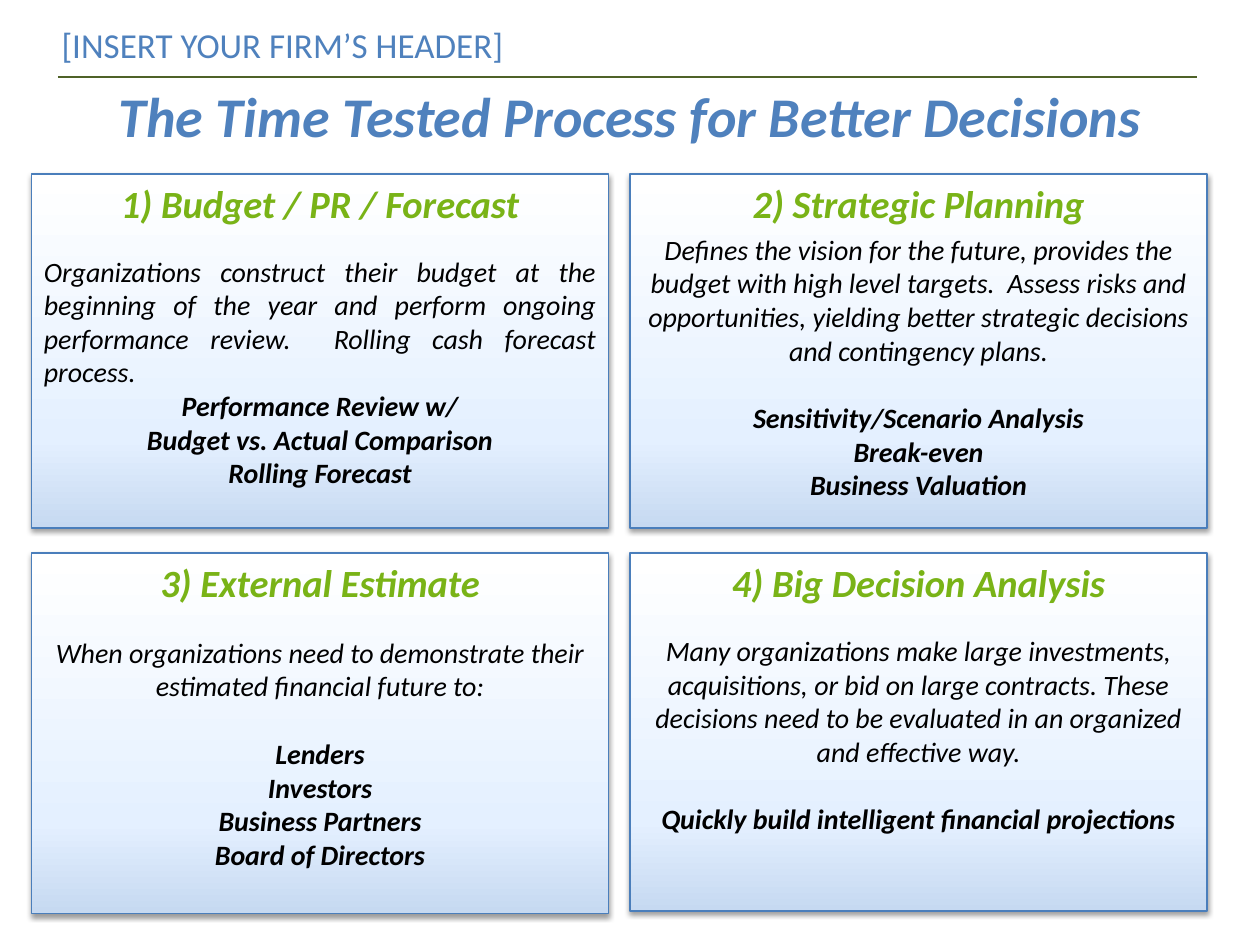
from lxml import etree
from pptx import Presentation
from pptx.dml.color import RGBColor
from pptx.enum.shapes import MSO_CONNECTOR, MSO_SHAPE
from pptx.enum.text import MSO_ANCHOR, PP_ALIGN
from pptx.oxml import parse_xml
from pptx.oxml.ns import qn
from pptx.util import Inches, Pt

FONT = "Calibri"
BLUE, GREEN, BLACK, RULE, BORDER = "4F81BD", "79B317", "000000", "4F6228", "4A7EBB"
GRADIENT = [(0, "C6D9F1"), (25, "E4F0FF"), (100, "FFFFFF")]
NS = 'xmlns:a="http://schemas.openxmlformats.org/drawingml/2006/main"'
LEFTS, TOPS, CARD_W = (0.25, 5), (1.38, 4.39), 4.58

CARDS = [
    dict(title="1) Budget / PR / Forecast", height=2.81, gap=16, align=PP_ALIGN.JUSTIFY,
         body="Organizations construct their budget at the beginning of the year and perform "
              "ongoing performance review.  Rolling cash forecast process.",
         points=["Performance Review w/", "Budget vs. Actual Comparison", "Rolling Forecast"],
         points_gap=0),
    dict(title="2) Strategic Planning", height=2.81, gap=3.5,
         body="Defines the vision for the future, provides the budget with high level targets.  "
              "Assess risks and opportunities, yielding better strategic decisions and "
              "contingency plans.",
         points=["Sensitivity/Scenario Analysis", "Break-even", "Business Valuation"]),
    dict(title="3) External Estimate", height=2.86, gap=17,
         body="When organizations need to demonstrate their estimated financial future to:",
         points=["Lenders", "Investors", "Business Partners", "Board of Directors"]),
    dict(title="4) Big Decision Analysis", height=2.84, gap=16,
         body="Many organizations make large investments, acquisitions, or bid on large "
              "contracts. These decisions need to be evaluated in an organized and effective way.",
         points=["Quickly build intelligent financial projections"]),
]


def rgb(color):
    """Turn a hex string into a colour."""
    return RGBColor.from_string(color)


def write(p, text, size, color, bold=False, italic=False, align=PP_ALIGN.CENTER, before=0):
    """Set the text and format of one paragraph."""
    p.text = text
    p.alignment = align
    p.space_before = Pt(before)
    for r in p.runs:
        r.font.name, r.font.size = FONT, Pt(size)
        r.font.bold, r.font.italic = bold, italic
        r.font.color.rgb = rgb(color)


def style_card(sp):
    """Give a card its upward gradient, border and soft shadow."""
    sp.fill.gradient()
    sp.fill.gradient_angle = 90
    stops = sp._element.spPr.find(qn("a:gradFill")).find(qn("a:gsLst"))
    for stop in list(stops):
        stops.remove(stop)
    for pos, color in GRADIENT:
        stops.append(parse_xml(
            f'<a:gs {NS} pos="{pos * 1000}"><a:srgbClr val="{color}"/></a:gs>'))
    sp.line.color.rgb = rgb(BORDER)
    sp.line.width = Pt(0.75)
    sp.shadow.inherit = False
    sp._element.spPr.find(qn("a:effectLst")).append(parse_xml(
        f'<a:outerShdw {NS} blurRad="{Pt(3.1)}" dist="{Pt(1.6)}" dir="5400000" '
        f'rotWithShape="0"><a:srgbClr val="{BLACK}"><a:alpha val="38000"/>'
        '</a:srgbClr></a:outerShdw>'))


def add_card(s, x, y, w, height, title, body, points, gap,
             align=PP_ALIGN.CENTER, points_gap=19.5):
    """Draw one process step with its heading, description and points."""
    sp = s.shapes.add_shape(MSO_SHAPE.RECTANGLE, Inches(x), Inches(y), Inches(w), Inches(height))
    style_card(sp)
    tf = sp.text_frame
    tf.word_wrap = True
    tf.vertical_anchor = MSO_ANCHOR.TOP
    write(tf.paragraphs[0], title, 22, GREEN, bold=True, italic=True)
    write(tf.add_paragraph(), body, 16, BLACK, italic=True, align=align, before=gap)
    for i, point in enumerate(points):
        write(tf.add_paragraph(), point, 16, BLACK, bold=True, italic=True,
              before=0 if i else points_gap)


def add_text(s, x, y, w, h, text, size, **style):
    """Place one line of blue text in a box."""
    tf = s.shapes.add_textbox(Inches(x), Inches(y), Inches(w), Inches(h)).text_frame
    tf.word_wrap = True
    tf.vertical_anchor = MSO_ANCHOR.MIDDLE
    write(tf.paragraphs[0], text, size, BLUE, **style)


def add_header(s, x, y, w, h):
    """Draw the firm header, the rule below it and the slide title."""
    line = s.shapes.add_connector(MSO_CONNECTOR.STRAIGHT, Inches(x + 0.46), Inches(y + 0.61),
                                  Inches(x + w - 0.5), Inches(y + 0.61))
    line.line.color.rgb = rgb(RULE)
    line.line.width = Pt(1)
    etree.SubElement(line._element.spPr, qn("a:effectLst"))
    add_text(s, x + 0.39, y + 0.13, 4.34, 0.44, "[INSERT YOUR FIRM’S HEADER]", 20,
             align=PP_ALIGN.LEFT)
    add_text(s, x, y + 0.6, w, h - 0.6, "The Time Tested Process for Better Decisions", 32,
             bold=True, italic=True)


def main():
    """Build the slide and save it."""
    prs = Presentation()
    prs.slide_width, prs.slide_height = Inches(10), Inches(7.5)
    s = prs.slides.add_slide(prs.slide_layouts[6])
    add_header(s, 0, 0, 10, 1.23)
    for i, card in enumerate(CARDS):
        add_card(s, LEFTS[i % 2], TOPS[i // 2], CARD_W, **card)
    prs.save("out.pptx")


if __name__ == "__main__":
    main()
